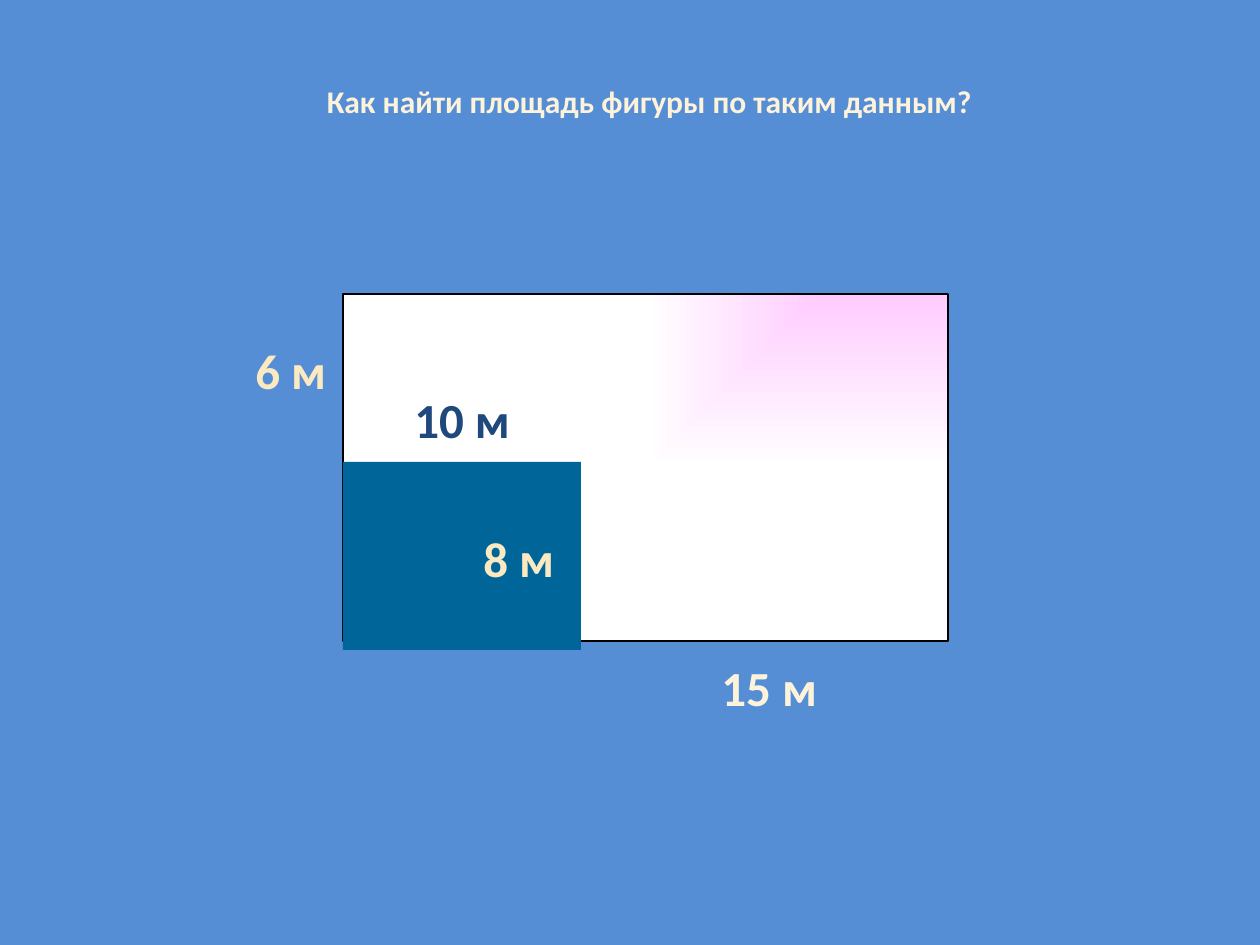
from lxml import etree
from pptx import Presentation, util as u
from pptx.dml.color import RGBColor
from pptx.enum import shapes, text
from pptx.oxml.ns import qn

PX = 914400 / 126
COLORS = {
    "background": "558ED5",
    "ivory": "FDF3DB",
    "cream": "FBEAC1",
    "navy": "1F497D",
    "pink": "FFCCFF",
    "white": "FFFFFF",
    "outline": "000000",
    "cutout": "006699",
}
LABEL_HEIGHT = 72


def px(*lengths):
    """Turn pixel lengths into EMU."""
    return [u.Emu(round(length * PX)) for length in lengths]


def rgb(name):
    """Look up a named colour."""
    return RGBColor.from_string(COLORS[name])


def add_label(parent, box, wording, color, size=28, align=None):
    """Add a bold line of text."""
    label = parent.add_textbox(*px(*box))
    frame = label.text_frame
    frame.word_wrap = True
    frame.auto_size = text.MSO_AUTO_SIZE.SHAPE_TO_FIT_TEXT
    line = frame.paragraphs[0]
    line.text = wording
    line.alignment = align
    line.font.name = "Calibri"
    line.font.size = u.Pt(size)
    line.font.bold = True
    line.font.color.rgb = rgb(color)


def add_rectangle(parent, box):
    """Add a rectangle without a shadow."""
    rectangle = parent.add_shape(shapes.MSO_SHAPE.RECTANGLE, *px(*box))
    rectangle.shadow.inherit = False
    return rectangle


def fill_from_top_right(rectangle, inner, outer):
    """Fill with a rectangular gradient that starts in the top right corner."""
    rectangle.fill.gradient()
    for stop, color in zip(rectangle.fill.gradient_stops, (inner, outer)):
        stop.color.rgb = rgb(color)
    gradient = rectangle.element.spPr.find(qn("a:gradFill"))
    gradient.remove(gradient.find(qn("a:lin")))
    route = etree.SubElement(gradient, qn("a:path"), {"path": "rect"})
    etree.SubElement(route, qn("a:fillToRect"), l="100000", b="100000")


def add_figure(slide):
    """Draw the rectangle with its cut-out and side lengths."""
    figure = slide.shapes.add_group_shape().shapes
    add_label(figure, (243, 334, 110, LABEL_HEIGHT), "6 м", "cream")
    add_label(figure, (709, 651, 129, LABEL_HEIGHT), "15 м", "ivory")

    whole = add_rectangle(figure, (343, 294, 605, 347))
    fill_from_top_right(whole, "pink", "white")
    whole.line.color.rgb = rgb("outline")
    whole.line.width = u.Pt(0.75)

    cutout = add_rectangle(figure, (343, 462, 238, 188))
    cutout.fill.solid()
    cutout.fill.fore_color.rgb = rgb("cutout")
    cutout.line.fill.background()

    add_label(figure, (471, 522, 149, LABEL_HEIGHT), "8 м", "cream")
    add_label(figure, (402, 383, 129, LABEL_HEIGHT), "10 м", "navy")


def main():
    """Build the area question slide."""
    deck = Presentation()
    deck.slide_width, deck.slide_height = px(1260, 945)
    slide = deck.slides.add_slide(deck.slide_layouts[6])
    slide.background.fill.solid()
    slide.background.fill.fore_color.rgb = rgb("background")
    add_label(slide.shapes, (223, 76, 853, 113),
              "Как найти площадь фигуры по таким данным?",
              "ivory", 18, text.PP_ALIGN.CENTER)
    add_figure(slide)
    deck.save("out.pptx")


if __name__ == "__main__":
    main()
